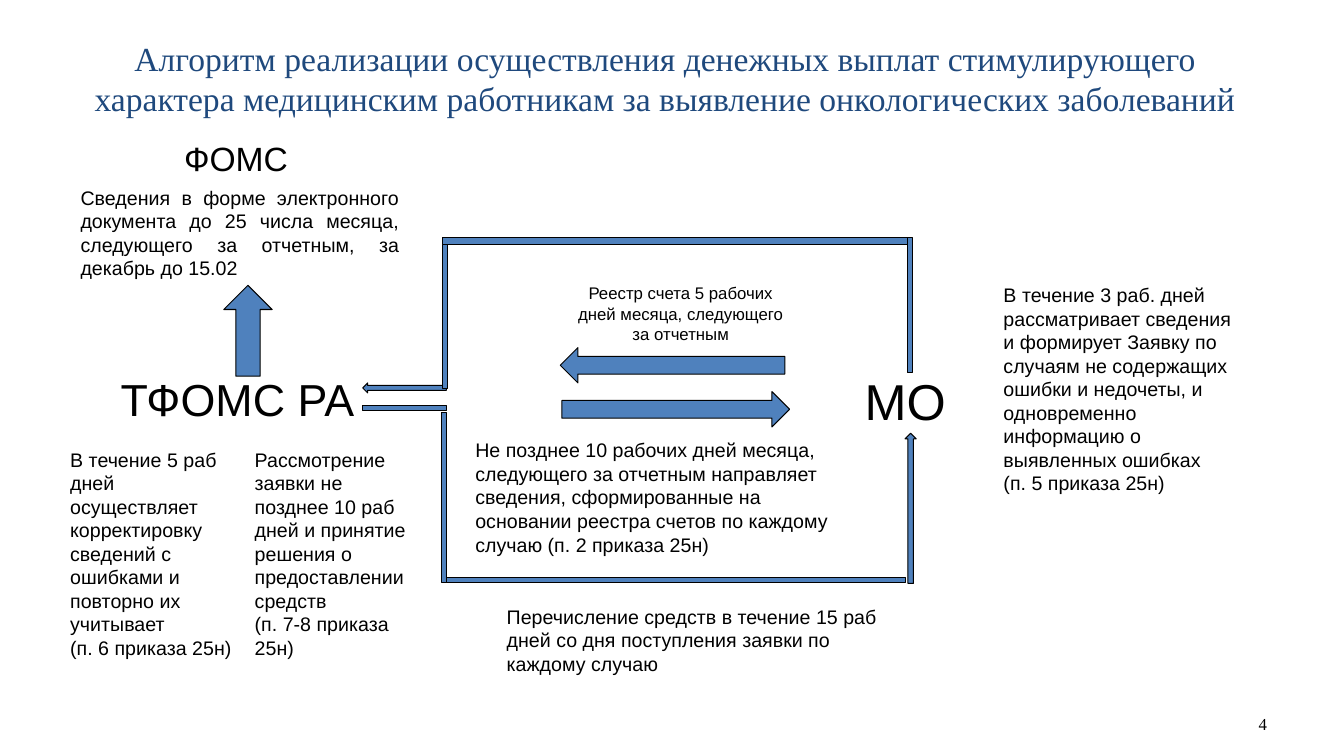
import pptx
import pptx.util
import pptx.dml.color
import pptx.enum.shapes
import pptx.enum.text

Cm = pptx.util.Cm
Pt = pptx.util.Pt
Kind = pptx.enum.shapes.MSO_SHAPE
Align = pptx.enum.text.PP_ALIGN
Anchor = pptx.enum.text.MSO_ANCHOR
Fit = pptx.enum.text.MSO_AUTO_SIZE


class Deck:
    hues = {"title": "1F497D", "text": "000000", "fill": "4F81BD", "line": "000000"}
    sans = "Arial"
    serif = "Times New Roman"

    def __init__(self):
        self.file = pptx.Presentation()
        self.file.slide_width = Cm(33.87)
        self.file.slide_height = Cm(19.05)
        self.slide = self.file.slides.add_slide(self.file.slide_layouts[5])

    def color(self, name):
        return pptx.dml.color.RGBColor.from_string(self.hues[name])

    def put(self, frame, lines, size, font, hue, align):
        for i, line in enumerate(lines):
            para = frame.paragraphs[0] if i == 0 else frame.add_paragraph()
            para.alignment = align
            run = para.add_run()
            run.text = line
            run.font.size = Pt(size)
            run.font.name = font
            run.font.color.rgb = self.color(hue)

    def title(self, box, text):
        head = self.slide.shapes.title
        head.left, head.top, head.width, head.height = map(Cm, box)
        frame = head.text_frame
        frame.word_wrap = True
        frame.auto_size = Fit.NONE
        frame.vertical_anchor = Anchor.MIDDLE
        self.put(frame, [text], 24, self.serif, "title", Align.CENTER)

    def text(self, box, lines, size=14, align=Align.LEFT, font=sans,
             anchor=Anchor.TOP, wrap=True):
        frame = self.slide.shapes.add_textbox(*map(Cm, box)).text_frame
        frame.word_wrap = wrap
        frame.vertical_anchor = anchor
        self.put(frame, lines, size, font, "text", align)

    def shape(self, kind, box):
        item = self.slide.shapes.add_shape(kind, *map(Cm, box))
        item.shadow.inherit = False
        item.fill.solid()
        item.fill.fore_color.rgb = self.color("fill")
        item.line.color.rgb = self.color("line")
        item.line.width = Pt(0.75)


def main():
    deck = Deck()
    deck.title((1.52, 0.91, 30.48, 2.13),
               "Алгоритм реализации осуществления денежных выплат стимулирующего "
               "характера медицинским работникам за выявление онкологических заболеваний")
    deck.text((24.28, 17.35, 7.9, 1.27), ["4"], 12, Align.RIGHT, deck.serif, Anchor.BOTTOM)

    deck.text((2.79, 9.25, 8.36, 1.63), ["ТФОМС РА"], 32)
    deck.text((21.54, 9.19, 3, 1.8), ["МО"], 36)
    deck.text((4.39, 3.35, 3.15, 1.27), ["ФОМС"], 24, wrap=False)

    deck.text((1.52, 11.15, 4.8, 5.64), [
        "В течение 5 раб дней осуществляет корректировку сведений с ошибками "
        "и повторно их учитывает",
        "(п. 6 приказа 25н)"])
    deck.text((6.17, 11.15, 4.6, 5.64), [
        "Рассмотрение заявки не позднее 10 раб дней и принятие решения "
        "о предоставлении средств",
        "(п. 7-8 приказа 25н)"])
    deck.text((14.12, 7.01, 6.07, 1.8), [
        "Реестр счета 5 рабочих дней месяца, следующего за отчетным"],
        12, Align.CENTER)
    deck.text((11.73, 10.92, 10.13, 3.25), [
        "Не позднее 10 рабочих дней месяца, следующего за отчетным направляет "
        "сведения, сформированные на основании реестра счетов по каждому "
        "случаю (п. 2 приказа 25н)"])
    deck.text((25.04, 7.01, 6.55, 5.64), [
        "В течение 3 раб. дней рассматривает сведения и формирует Заявку по "
        "случаям не содержащих ошибки и недочеты, и одновременно информацию "
        "о выявленных ошибках",
        "(п. 5 приказа 25н)"])
    deck.text((1.78, 4.55, 8.53, 2.64), [
        "Сведения в форме электронного документа до 25 числа месяца, "
        "следующего за отчетным, за декабрь до 15.02"], align=Align.JUSTIFY)
    deck.text((12.52, 15.11, 10.01, 2.06), [
        "Перечисление средств в течение 15 раб дней со дня поступления заявки "
        "по каждому случаю"])

    for kind, box in [
        (Kind.UP_ARROW, (5.64, 7.19, 1.22, 2.29)),
        (Kind.LEFT_ARROW, (14.12, 8.76, 5.66, 0.89)),
        (Kind.RIGHT_ARROW, (14.16, 9.87, 5.74, 0.89)),
        (Kind.LEFT_ARROW, (9.14, 9.65, 2.11, 0.25)),
        (Kind.RECTANGLE, (11.15, 6.07, 0.13, 3.73)),
        (Kind.RECTANGLE, (11.15, 5.99, 11.71, 0.18)),
        (Kind.RECTANGLE, (22.86, 5.99, 0.13, 3.4)),
        (Kind.UP_ARROW, (22.81, 10.92, 0.28, 3.78)),
        (Kind.RECTANGLE, (11.25, 14.55, 11.58, 0.13)),
        (Kind.RECTANGLE, (11.13, 10.39, 0.13, 4.29)),
        (Kind.RECTANGLE, (9.14, 10.21, 2.11, 0.13)),
    ]:
        deck.shape(kind, box)

    deck.file.save("out.pptx")


if __name__ == "__main__":
    main()
